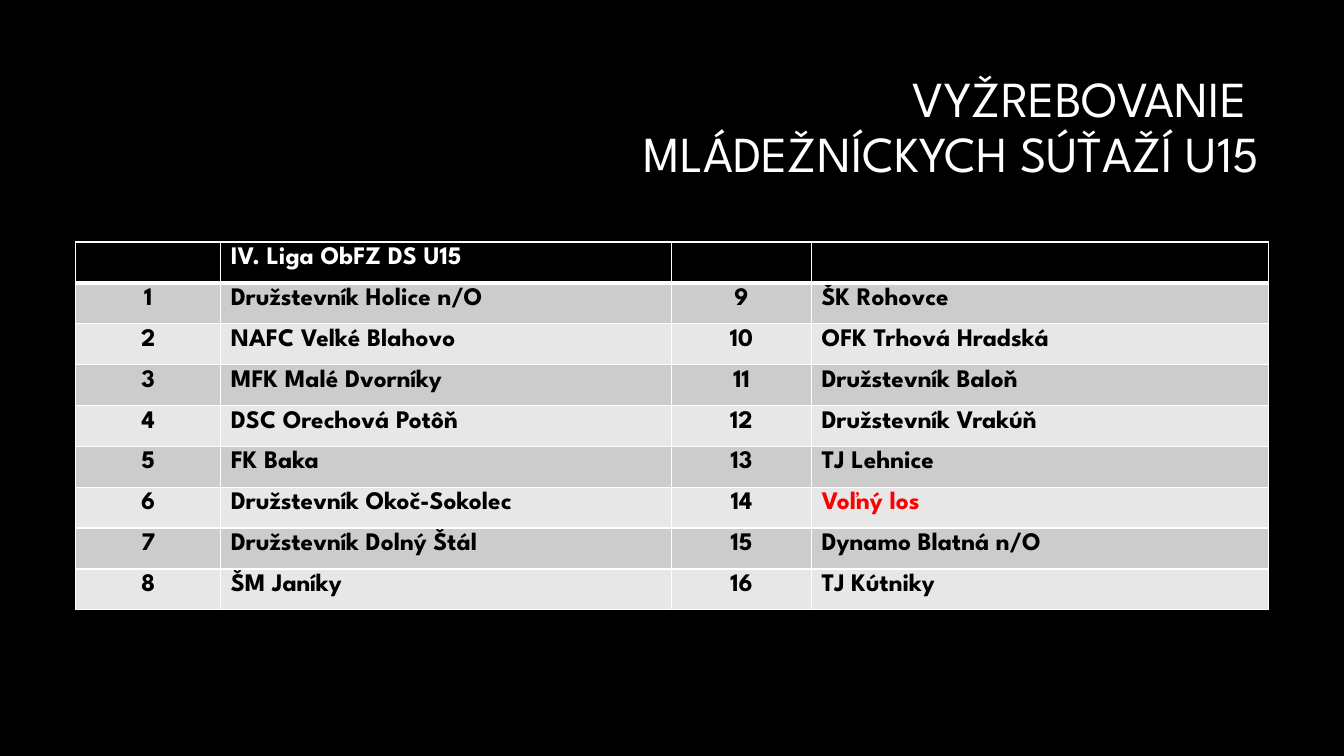
from copy import deepcopy

from lxml import etree
from pptx import Presentation
from pptx.dml.color import RGBColor
from pptx.enum.text import MSO_ANCHOR, MSO_AUTO_SIZE, PP_ALIGN
from pptx.oxml.ns import qn
from pptx.util import Inches, Pt

CENTER, LEFT, RIGHT = PP_ALIGN.CENTER, PP_ALIGN.LEFT, PP_ALIGN.RIGHT
MIDDLE = MSO_ANCHOR.MIDDLE
NO_AUTOFIT = MSO_AUTO_SIZE.NONE
FONT = "League Spartan"
BLACK, WHITE, RED = "000000", "FFFFFF", "FF0000"
BANDS = ["E7E7E7", "CCCCCC"]

LEAGUE = "IV. Liga ObFZ DS U15"
FREE_DRAW = "Voľný los"
TEAMS = [
    "Družstevník Holice n/O", "NAFC Veľké Blahovo", "MFK Malé Dvorníky",
    "DSC Orechová Potôň", "FK Baka", "Družstevník Okoč-Sokolec",
    "Družstevník Dolný Štál", "ŠM Janíky", "ŠK Rohovce",
    "OFK Trhová Hradská", "Družstevník Baloň", "Družstevník Vrakúň",
    "TJ Lehnice", FREE_DRAW, "Dynamo Blatná n/O", "TJ Kútniky",
]
HALF = len(TEAMS) // 2


def color(value):
    return RGBColor.from_string(value)


def add_border(cell, side, points):
    line = etree.SubElement(cell._tc.get_or_add_tcPr(), qn(f"a:ln{side}"), w=str(Pt(points)))
    fill = etree.SubElement(line, qn("a:solidFill"))
    etree.SubElement(fill, qn("a:srgbClr"), val=WHITE)


deck = Presentation()
deck.slide_width, deck.slide_height = Inches(13.33), Inches(7.5)
page = deck.slides.add_slide(deck.slide_layouts[5])
page.background.fill.solid()
page.background.fill.fore_color.rgb = color(BLACK)

title = page.shapes.title
title.left, title.top = Inches(3.17), Inches(0.84)
title.width, title.height = Inches(9.42), Inches(1.41)
frame = title.text_frame
frame.text = "VYŽREBOVANIE \vMLÁDEŽNÍCKYCH SÚŤAŽÍ U15"
frame.word_wrap = True
frame.auto_size = NO_AUTOFIT
frame.vertical_anchor = MIDDLE
frame.margin_bottom = Inches(0.59)
heading = frame.paragraphs[0]
heading.alignment = RIGHT
heading.line_spacing = 0.9
for span in heading.runs:
    span.font.name = FONT
    span.font.size = Pt(36)
    span.font.color.rgb = color(WHITE)
for line_break in heading._p.findall(qn("a:br")):
    line_break.append(deepcopy(heading.runs[0]._r.rPr))

rows = [["", LEAGUE, "", ""]]
for index in range(HALF):
    rows.append([str(index + 1), TEAMS[index], str(index + HALF + 1), TEAMS[index + HALF]])

table = page.shapes.add_table(
    len(rows), 4, Inches(0.75), Inches(2.4), Inches(11.83), Inches(3.65)
).table
for column, width in zip(table.columns, [1.44, 4.47, 1.39, 4.53]):
    column.width = Inches(width)

for row_number, row in enumerate(rows):
    header = row_number == 0
    for column_number, text in enumerate(row):
        cell = table.cell(row_number, column_number)
        add_border(cell, "L", 1)
        add_border(cell, "R", 1)
        add_border(cell, "T", 3 if row_number == 1 else 1)
        add_border(cell, "B", 3 if header else 1)
        cell.fill.solid()
        cell.fill.fore_color.rgb = color(BLACK if header else BANDS[row_number % 2])
        cell.text = text
        para = cell.text_frame.paragraphs[0]
        para.alignment = LEFT if column_number % 2 else CENTER
        for span in para.runs:
            span.font.name = FONT
            span.font.size = Pt(18)
            span.font.bold = True
            span.font.color.rgb = color(WHITE if header else RED if text == FREE_DRAW else BLACK)

deck.save("out.pptx")
